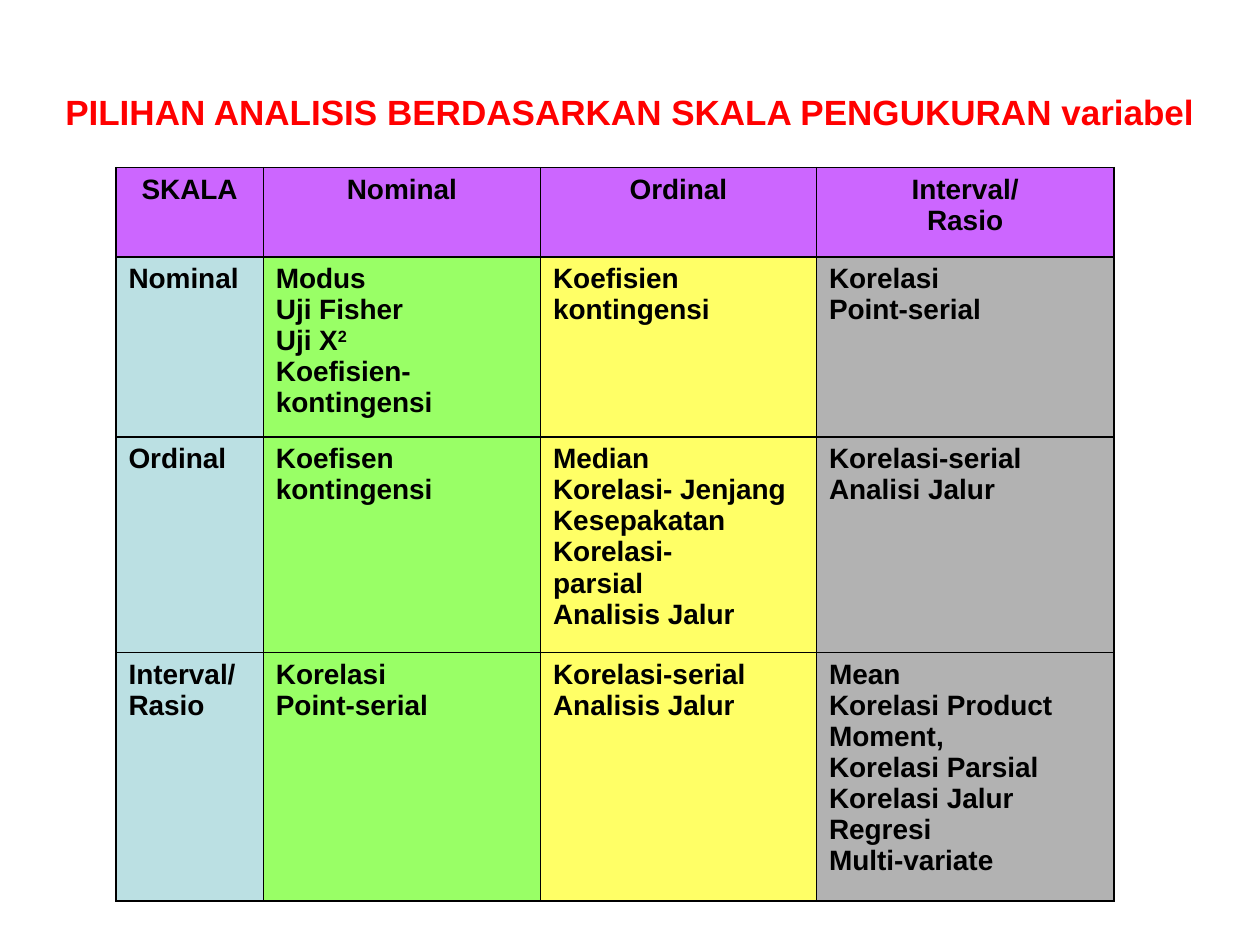
from dataclasses import dataclass

from lxml.etree import SubElement
from pptx import Presentation
from pptx.dml.color import RGBColor
from pptx.enum.text import MSO_AUTO_SIZE, PP_ALIGN
from pptx.oxml.ns import qn
from pptx.util import Inches, Pt

WIDTH, HEIGHT = 10, 7.5
COLS = (1.17, 2.2, 2.19, 2.36)
ROWS = (0.71, 1.43, 1.71, 1.97)
HEAD = "CC66FF"
FILLS = ("BBE0E3", "99FF66", "FFFF66", "B2B2B2")  # one per column
BLACK, RED = "000000", "FF0000"


@dataclass
class Run:
    text: str
    raised: bool = False


# Table rows: a line break splits paragraphs, a list holds a cell's own runs
SQUARE = [[Run("Modus")], [Run("Uji Fisher")], [Run("Uji X"), Run("2", True)],
          [Run("Koefisien- kontingensi")]]
GRID = (
    ("SKALA", "Nominal", "Ordinal", "Interval/\nRasio"),
    ("Nominal", SQUARE, "Koefisien\nkontingensi", "Korelasi\nPoint-serial"),
    ("Ordinal", "Koefisen\nkontingensi",
     "Median\nKorelasi- Jenjang\nKesepakatan\nKorelasi-\nparsial\nAnalisis Jalur",
     "Korelasi-serial\nAnalisi Jalur"),
    ("Interval/\nRasio", "Korelasi\nPoint-serial", "Korelasi-serial\nAnalisis Jalur",
     "Mean\nKorelasi Product Moment,\nKorelasi Parsial\nKorelasi Jalur\n"
     "Regresi\nMulti-variate"),
)


def color(code: str) -> RGBColor:
    return RGBColor.from_string(code)


def add_run(para, part: Run, size: int, code: str) -> None:
    run = para.add_run()
    run.text = part.text
    font = run.font
    font.name, font.size, font.bold = "Arial", Pt(size), True
    font.color.rgb = color(code)
    if part.raised:
        run._r.get_or_add_rPr().set("baseline", "30000")


def add_edges(cell) -> None:
    props = cell._tc.get_or_add_tcPr()
    for side in ("lnL", "lnR", "lnT", "lnB"):
        line = SubElement(props, qn(f"a:{side}"), w=str(Pt(1)))
        fill = SubElement(line, qn("a:solidFill"))
        SubElement(fill, qn("a:srgbClr"), val=BLACK)


def fill_cell(cell, text: str | list, code: str, align: PP_ALIGN) -> None:
    add_edges(cell)  # borders come before the fill in the cell's XML
    cell.fill.solid()
    cell.fill.fore_color.rgb = color(code)
    lines = [[Run(t)] for t in text.split("\n")] if isinstance(text, str) else text
    frame = cell.text_frame
    for i, line in enumerate(lines):
        para = frame.add_paragraph() if i else frame.paragraphs[0]
        para.alignment = align
        for part in line:
            add_run(para, part, 16, BLACK)


def add_grid(slide) -> None:
    table = slide.shapes.add_table(
        len(ROWS), len(COLS), Inches(0.92), Inches(1.33),
        Inches(sum(COLS)), Inches(sum(ROWS))).table
    table.horz_banding = False
    for col, width in zip(table.columns, COLS):
        col.width = Inches(width)
    for row, height in zip(table.rows, ROWS):
        row.height = Inches(height)
    for r, texts in enumerate(GRID):
        for c, text in enumerate(texts):
            if r == 0:
                align = PP_ALIGN.CENTER
            else:
                align = PP_ALIGN.LEFT if c else PP_ALIGN.JUSTIFY
            fill_cell(table.cell(r, c), text, FILLS[c] if r else HEAD, align)


def add_title(slide) -> None:
    box = slide.shapes.add_textbox(Inches(0.42), Inches(0.67),
                                   Inches(9.17), Inches(0.44))
    frame = box.text_frame
    frame.word_wrap = False
    frame.auto_size = MSO_AUTO_SIZE.SHAPE_TO_FIT_TEXT
    title = Run("PILIHAN ANALISIS BERDASARKAN SKALA PENGUKURAN variabel")
    add_run(frame.paragraphs[0], title, 20, RED)


def main() -> None:
    deck = Presentation()
    deck.slide_width, deck.slide_height = Inches(WIDTH), Inches(HEIGHT)
    slide = deck.slides.add_slide(deck.slide_layouts[6])
    add_grid(slide)
    add_title(slide)
    deck.save("out.pptx")


if __name__ == "__main__":
    main()
